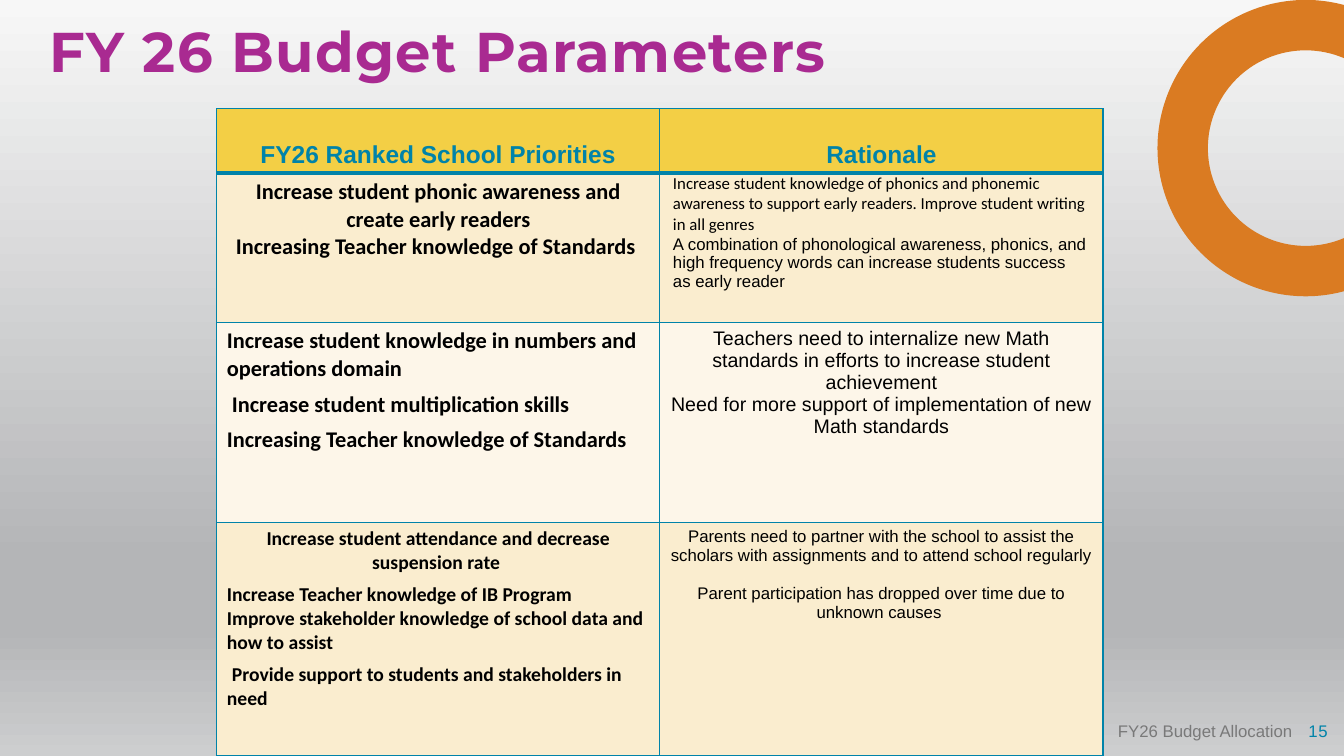
from dataclasses import dataclass
from math import acos, degrees, sqrt

from lxml.etree import SubElement
from pptx import Presentation
from pptx.dml.color import RGBColor
from pptx.enum.text import MSO_ANCHOR, PP_ALIGN
from pptx.oxml import parse_xml
from pptx.oxml.ns import nsdecls, qn
from pptx.util import Emu, Inches, Pt

WIDTH, HEIGHT = 13.33, 7.5
CENTER, LEFT, RIGHT = PP_ALIGN.CENTER, PP_ALIGN.LEFT, PP_ALIGN.RIGHT


@dataclass(frozen=True)
class Theme:
    teal: str = "0083A9"
    purple: str = "A92A91"
    orange: str = "DA7B22"
    gold: str = "F3CF45"
    band: str = "FAEDCF"
    pale: str = "FDF6E9"
    ink: str = "000000"
    gray: str = "797979"
    backdrop: tuple = ((0, "F7F7F7"), (74, "B4B5B7"), (83, "B4B5B7"), (100, "CDCECF"))
    heading: str = "Montserrat"
    sans: str = "Arial"
    body: str = "Calibri"
    title: float = 40
    header: float = 17.5
    large: float = 16
    medium: float = 14
    small: float = 12


THEME = Theme()


@dataclass(frozen=True)
class Line:
    text: str
    size: float
    font: str = THEME.body
    bold: bool = False
    align: PP_ALIGN = LEFT
    before: float = 0
    indent: float = 0
    color: str = THEME.ink
    tracking: float = 0
    spacing: float = 1


def write(frame, lines):
    frame.word_wrap = True
    for index, line in enumerate(lines):
        para = frame.paragraphs[0] if index == 0 else frame.add_paragraph()
        para.alignment, para.line_spacing = line.align, line.spacing
        para.space_before = Pt(line.before)
        if line.indent:
            para._p.get_or_add_pPr().set("indent", str(Inches(line.indent)))
        for number, part in enumerate(line.text.split("\n")):
            if number:
                para.add_line_break()
            span = para.add_run()
            span.text = part
            span.font.name, span.font.size, span.font.bold = line.font, Pt(line.size), line.bold
            span.font.color.rgb = RGBColor.from_string(line.color)
            if line.tracking:
                span.font._element.set("spc", str(round(line.tracking * 100)))


def set_margins(target, sides, ends):
    target.margin_left = target.margin_right = Inches(sides)
    target.margin_top = target.margin_bottom = Inches(ends)


def add_text(page, box, line, anchor=MSO_ANCHOR.TOP):
    frame = page.shapes.add_textbox(*map(Inches, box)).text_frame
    set_margins(frame, 0, 0)
    frame.vertical_anchor = anchor
    write(frame, [line])


def paint_background(page):
    page.background.fill.gradient()
    gradient = page.element.find(".//" + qn("a:gradFill"))
    stops = gradient.find(qn("a:gsLst"))
    for stop in list(stops):
        stops.remove(stop)
    for share, color in THEME.backdrop:
        stop = SubElement(stops, qn("a:gs"), pos=str(share * 1000))
        SubElement(stop, qn("a:srgbClr"), val=color)
    gradient.find(qn("a:lin")).set("ang", str(90 * 60000))


def add_ring(page, center, outer, inner):
    """Ring cut off by the right edge of the slide."""
    x, y = center
    reach = WIDTH - x
    rise, gap = sqrt(outer**2 - reach**2), sqrt(inner**2 - reach**2)
    corners = [(WIDTH, y - rise), (x, y - outer), (x - outer, y), (x, y + outer),
               (WIDTH, y + gap)]
    points = [(Inches(across), Inches(down)) for across, down in corners]
    builder = page.shapes.build_freeform(*points[0])
    builder.add_line_segments(points[1:], close=True)
    ring = builder.convert_to_shape()

    # Round the outline: one arc out, a step along the edge, one arc back
    outline = ring._element.find(".//" + qn("a:path"))
    _, top, left, bottom, edge, _ = list(outline)
    for corner in (top, left, bottom):
        outline.remove(corner)
    for neighbour, radius, way in ((outline[0], outer, -1), (edge, inner, 1)):
        start = degrees(acos(reach / radius))
        arc = parse_xml(
            f'<a:arcTo {nsdecls("a")} wR="{Inches(radius)}" hR="{Inches(radius)}" '
            f'stAng="{round(way * start * 60000)}" '
            f'swAng="{round(way * (360 - 2 * start) * 60000)}"/>')
        neighbour.addnext(arc)

    ring.shadow.inherit = False
    ring.fill.solid()
    ring.fill.fore_color.rgb = RGBColor.from_string(THEME.orange)
    ring.line.fill.background()


def set_borders(cell, top, bottom):
    properties = cell._tc.get_or_add_tcPr()
    sides = {"lnL": 1, "lnR": 1, "lnT": top, "lnB": bottom}
    for index, (side, width) in enumerate(sides.items()):
        properties.insert(index, parse_xml(
            f'<a:{side} {nsdecls("a")} w="{Pt(width)}"><a:solidFill>'
            f'<a:srgbClr val="{THEME.teal}"/></a:solidFill></a:{side}>'))


def priority(text, size, **options):
    return Line(text, size, bold=True, **options)


def reason(text, size, **options):
    return Line(text, size, THEME.sans, **options)


def heading(text):
    return Line(text, THEME.header, THEME.sans, True, CENTER, color=THEME.teal)


LARGE, MEDIUM, SMALL = THEME.large, THEME.medium, THEME.small
ROWS = [
    (0.64, THEME.gold, [heading("FY26 Ranked School Priorities")], [heading("Rationale")]),
    (1.48, THEME.band, [
        priority("Increase student phonic awareness and create early readers", LARGE, align=CENTER),
        priority("Increasing Teacher knowledge of Standards ", LARGE, align=CENTER),
    ], [
        Line("Increase student knowledge of phonics and phonemic awareness to support early "
             "readers. Improve student writing in all genres", SMALL),
        reason("A combination of phonological awareness, phonics, and high frequency words "
               "can increase students success\nas early reader", SMALL),
    ]),
    (1.98, THEME.pale, [
        priority("Increase student knowledge in numbers and operations domain", LARGE),
        priority("Increase student multiplication skills", LARGE, before=6, indent=0.05),
        priority("Increasing Teacher knowledge of Standards", LARGE, before=6),
    ], [
        reason("Teachers need to internalize new Math standards in efforts to increase "
               "student achievement", MEDIUM, align=CENTER),
        reason("Need for more support of implementation of new Math standards", MEDIUM,
               align=CENTER),
    ]),
    (2.32, THEME.band, [
        priority("Increase student attendance and decrease suspension rate ", MEDIUM, align=CENTER),
        priority("Increase Teacher knowledge of IB Program", MEDIUM, before=6),
        priority("Improve stakeholder knowledge of school data and how to assist", MEDIUM),
        priority("Provide support to students and stakeholders in need", MEDIUM,
                 before=6, indent=0.05),
    ], [
        reason("Parents need to partner with the school to assist the scholars with "
               "assignments and to attend school regularly", SMALL, align=CENTER),
        reason("Parent participation has dropped over time due to unknown causes ", SMALL,
               align=CENTER, before=13.8),
    ]),
]


def add_priorities(page, left, top, width):
    height = sum(row[0] for row in ROWS)
    table = page.shapes.add_table(len(ROWS), 2, *map(Inches, (left, top, width, height))).table
    table.first_row = table.horz_banding = False
    for column in table.columns:
        column.width = Emu(Inches(width) // 2)
    for index, (row_height, fill, *contents) in enumerate(ROWS):
        table.rows[index].height = Inches(row_height)
        for column, lines in enumerate(contents):
            cell = table.cell(index, column)
            cell.fill.solid()
            cell.fill.fore_color.rgb = RGBColor.from_string(fill)
            set_borders(cell, 3 if index == 1 else 1, 3 if index == 0 else 1)
            set_margins(cell, 0.1, 0.05)
            cell.vertical_anchor = MSO_ANCHOR.BOTTOM if index == 0 else MSO_ANCHOR.TOP
            write(cell.text_frame, lines)
    set_margins(table.cell(1, 1), 0.13, 0)


def add_footer(page, top, height):
    label = Line("FY26 Budget Allocation", SMALL, THEME.sans, align=RIGHT, color=THEME.gray)
    number = Line("15", SMALL, THEME.sans, align=RIGHT, color=THEME.teal, tracking=0.5)
    add_text(page, (10.17, top, 3, height), number, MSO_ANCHOR.MIDDLE)
    add_text(page, (10.79, top, 2.03, height), label, MSO_ANCHOR.MIDDLE)


def build_budget_page(deck):
    page = deck.slides.add_slide(deck.slide_layouts[6])
    paint_background(page)
    add_ring(page, (12.95, 1.47), 1.47, 0.97)
    add_text(page, (0.49, 0.24, 8.49, 0.75),
             Line("FY 26 Budget Parameters", THEME.title, THEME.heading, True,
                  color=THEME.purple, tracking=1, spacing=0.9))
    add_priorities(page, 2.15, 1.08, 8.79)
    add_footer(page, 7.05, 0.4)


def main():
    deck = Presentation()
    deck.slide_width, deck.slide_height = Inches(WIDTH), Inches(HEIGHT)
    build_budget_page(deck)
    deck.save("out.pptx")


if __name__ == "__main__":
    main()
